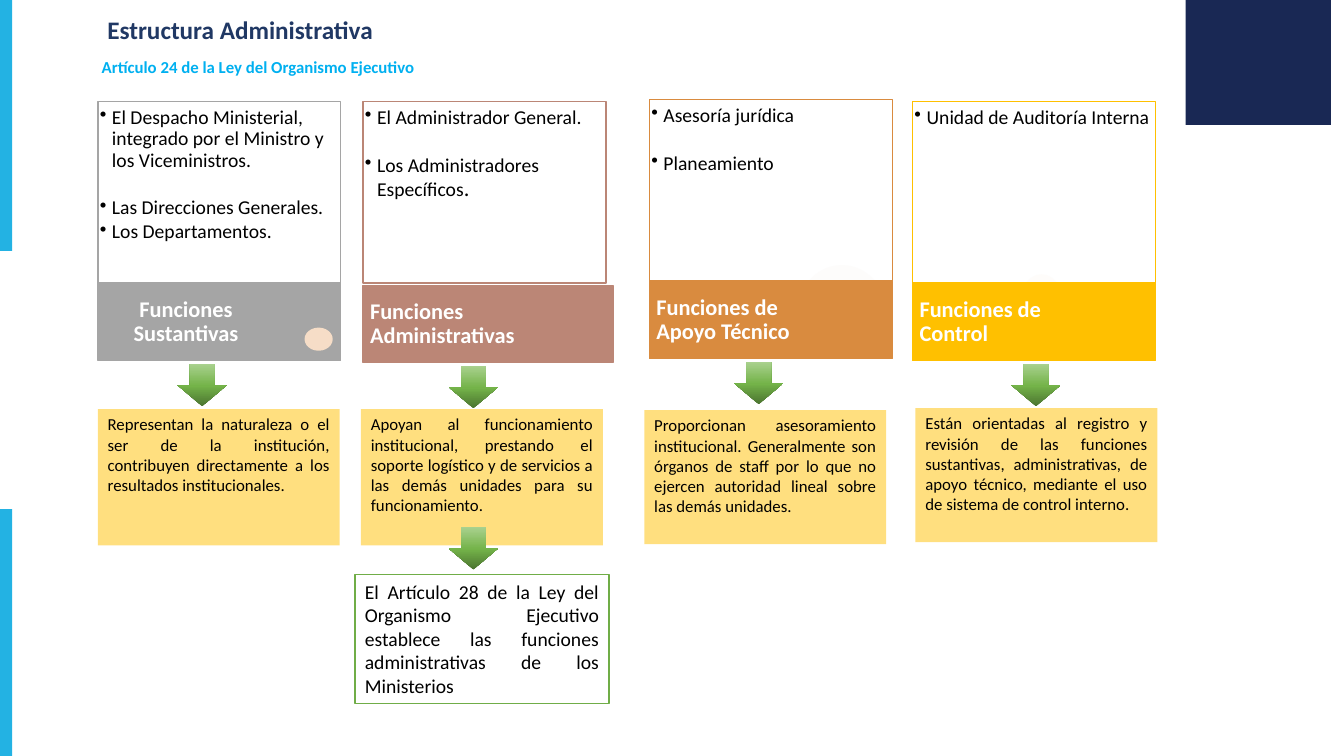
from lxml import etree
from pptx import Presentation
from pptx.dml.color import RGBColor
from pptx.enum.shapes import MSO_SHAPE as Shape
from pptx.enum.text import MSO_ANCHOR as Anchor, PP_ALIGN as Align
from pptx.oxml import parse_xml
from pptx.oxml.ns import nsdecls, qn
from pptx.util import Inches, Pt

COLORS = {
    "sky": "23B2E3", "navy": "192854", "title": "203864", "subtitle": "00B0F0",
    "white": "FFFFFF", "black": "000000", "gold": "FFC000", "green": "70AD47",
    "gray": "A5A5A5", "rose": "BB8676", "orange": "D98B3F",
    "rose_tint": "ECDFD9", "orange_tint": "F6E2D1", "gold_tint": "FFE4CB",
}
ARROW_STOPS = [(0, "4B7430"), (48, "74B349"), (100, "A9D18E")]
BOX_WIDTH = 2.41
LIST_HEIGHT = 1.8
HEADER_HEIGHT = 0.77


def add_text(frame, text, size=12, color="black", bold=False, align=Align.LEFT,
             spacing=None, before=0, after=0, bullet=False, ending=None):
    first = frame.paragraphs[0]
    paragraph = frame.add_paragraph() if first.runs else first
    paragraph.alignment = align
    paragraph.line_spacing = spacing
    paragraph.space_before = Pt(before)
    paragraph.space_after = Pt(after)
    if bullet:
        props = paragraph._p.get_or_add_pPr()
        props.set("marL", str(Inches(0.12)))
        props.set("indent", str(Inches(-0.12)))
        etree.SubElement(props, qn("a:buChar")).set("char", "•")
    parts = [(text, size)] + ([ending] if ending else [])
    for words, points in parts:
        run = paragraph.add_run()
        run.text = words
        run.font.name = "Calibri"
        run.font.size = Pt(points)
        run.font.bold = bold
        run.font.color.rgb = RGBColor.from_string(COLORS[color])


class StructureSlide:
    def __init__(self, slide):
        self.shapes = slide.shapes

    def frame(self, item, insets=(0.1, 0.05, 0.1, 0.05), anchor=Anchor.TOP):
        frame = item.text_frame
        frame.word_wrap = True
        frame.vertical_anchor = anchor
        (frame.margin_left, frame.margin_top,
         frame.margin_right, frame.margin_bottom) = map(Inches, insets)
        return frame

    def shape(self, at, fill, kind=Shape.RECTANGLE, line=None, opacity=100):
        item = self.shapes.add_shape(kind, *map(Inches, at))
        item.shadow.inherit = False
        item.fill.solid()
        item.fill.fore_color.rgb = RGBColor.from_string(COLORS[fill])
        if opacity < 100:
            color = item.fill._xPr.find(qn("a:solidFill"))[0]
            etree.SubElement(color, qn("a:alpha")).set("val", str(opacity * 1000))
        if line:
            item.line.color.rgb = RGBColor.from_string(COLORS[line])
            item.line.width = Pt(1)
        else:
            item.line.fill.background()
        return item

    def headings(self):
        box = self.shapes.add_textbox(*map(Inches, (0.91, 0.13, 5.64, 0.8)))
        frame = self.frame(box)
        add_text(frame, " Estructura Administrativa", size=18, color="title",
                 bold=True, align=Align.JUSTIFY, spacing=0.9)
        add_text(frame, "Artículo 24 de la Ley del Organismo Ejecutivo",
                 color="subtitle", bold=True, align=Align.JUSTIFY,
                 spacing=0.9, before=10)

    def unit_list(self, left, top, color, units):
        box = self.shape((left, top, BOX_WIDTH, LIST_HEIGHT), "white",
                         line=color, opacity=90)
        frame = self.frame(box, (0.02, 0.06, 0.02, 0.02))
        for text, style in units:
            add_text(frame, text, size=14, spacing=0.9, after=2, bullet=True, **style)

    def header(self, left, top, width, color, name, align):
        box = self.shape((left, top, width, HEADER_HEIGHT), color, line=color)
        frame = self.frame(box, (0.07, 0, 0.73, 0), Anchor.MIDDLE)
        add_text(frame, name, size=16, color="white", bold=True,
                 align=align, spacing=0.9)

    def ellipse(self, at, color):
        self.shape(at, color, kind=Shape.OVAL, opacity=90)

    def note(self, at, text, size=12, fill="gold", line=None, opacity=50):
        box = self.shape(at, fill, line=line, opacity=opacity)
        add_text(self.frame(box), text, size=size, align=Align.JUSTIFY)

    def arrow(self, left, top):
        item = self.shape((left, top, 0.49, 0.42), "green", kind=Shape.DOWN_ARROW)
        stops = "".join(
            f'<a:gs pos="{position * 1000}"><a:srgbClr val="{color}"/></a:gs>'
            for position, color in ARROW_STOPS)
        gradient = parse_xml(
            f'<a:gradFill {nsdecls("a")} rotWithShape="1"><a:gsLst>{stops}</a:gsLst>'
            '<a:lin ang="16200000" scaled="0"/></a:gradFill>')
        props = item.fill._xPr
        props.replace(props.find(qn("a:solidFill")), gradient)


GAP = {"before": 17}
FUNCTIONS = [
    dict(left=0.97, top=1.01, color="gray", name="Funciones Sustantivas",
         align=Align.CENTER,
         units=[("El Despacho Ministerial, integrado por el Ministro y los Viceministros.", {}),
                ("Las Direcciones Generales.", GAP), ("Los Departamentos.", {})],
         arrow=(1.76, 3.61), note=(0.97, 4.06, 2.4, 1.35),
         role="Representan la naturaleza o el ser de la institución, contribuyen "
              "directamente a los resultados institucionales."),
    dict(left=3.6, top=1.01, color="rose", name="Funciones Administrativas",
         header_gap=0.02, header_width=2.48,
         units=[("El Administrador General.", {}),
                ("Los Administradores Específicos", {**GAP, "ending": (".", 16)})],
         arrow=(4.45, 3.63), note=(3.58, 4.06, 2.4, 1.35),
         role="Apoyan al funcionamiento institucional, prestando el soporte logístico "
              "y de servicios a las demás unidades para su funcionamiento."),
    dict(left=6.44, top=0.99, color="orange", name="Funciones de Apoyo Técnico",
         ellipse=((7.93, 2.63, 0.84, 0.84), "rose_tint"),
         units=[("Asesoría jurídica", {}), ("Planeamiento", GAP)],
         arrow=(7.28, 3.59), note=(6.39, 4.07, 2.4, 1.33),
         role="Proporcionan asesoramiento institucional. Generalmente son órganos de "
              "staff por lo que no ejercen autoridad lineal sobre las demás unidades."),
    dict(left=9.05, top=1.01, color="gold", name="Funciones de Control",
         ellipse=((10.12, 2.72, 0.42, 0.55), "orange_tint"),
         units=[("Unidad de Auditoría Interna", {})],
         arrow=(10.03, 3.61), note=(9.08, 4.05, 2.4, 1.33),
         role="Están orientadas al registro y revisión de las funciones sustantivas, "
              "administrativas, de apoyo técnico, mediante el uso de sistema de "
              "control interno."),
]


def main():
    deck = Presentation()
    deck.slide_width, deck.slide_height = Inches(13.33), Inches(7.5)
    page = StructureSlide(deck.slides.add_slide(deck.slide_layouts[6]))

    page.headings()
    for top, height in ((0, 2.49), (5.05, 2.45)):
        page.shape((0, top, 0.12, height), "sky")
    page.shape((11.76, 0, 1.44, 1.24), "navy")

    for function in FUNCTIONS:
        left, top, color = function["left"], function["top"], function["color"]
        if "ellipse" in function:
            page.ellipse(*function["ellipse"])
        page.unit_list(left, top, color, function["units"])
        page.header(left, top + LIST_HEIGHT + function.get("header_gap", 0),
                    function.get("header_width", BOX_WIDTH), color,
                    function["name"], function.get("align", Align.LEFT))
        page.arrow(*function["arrow"])
        page.note(function["note"], function["role"])

    page.ellipse((3.02, 3.25, 0.28, 0.23), "gold_tint")
    page.note((3.52, 5.7, 2.52, 1.28),
              "El Artículo 28 de la Ley del Organismo Ejecutivo establece las "
              "funciones administrativas de los Ministerios",
              size=14, fill="white", line="green", opacity=100)
    page.arrow(4.45, 5.23)
    deck.save("out.pptx")


if __name__ == "__main__":
    main()
